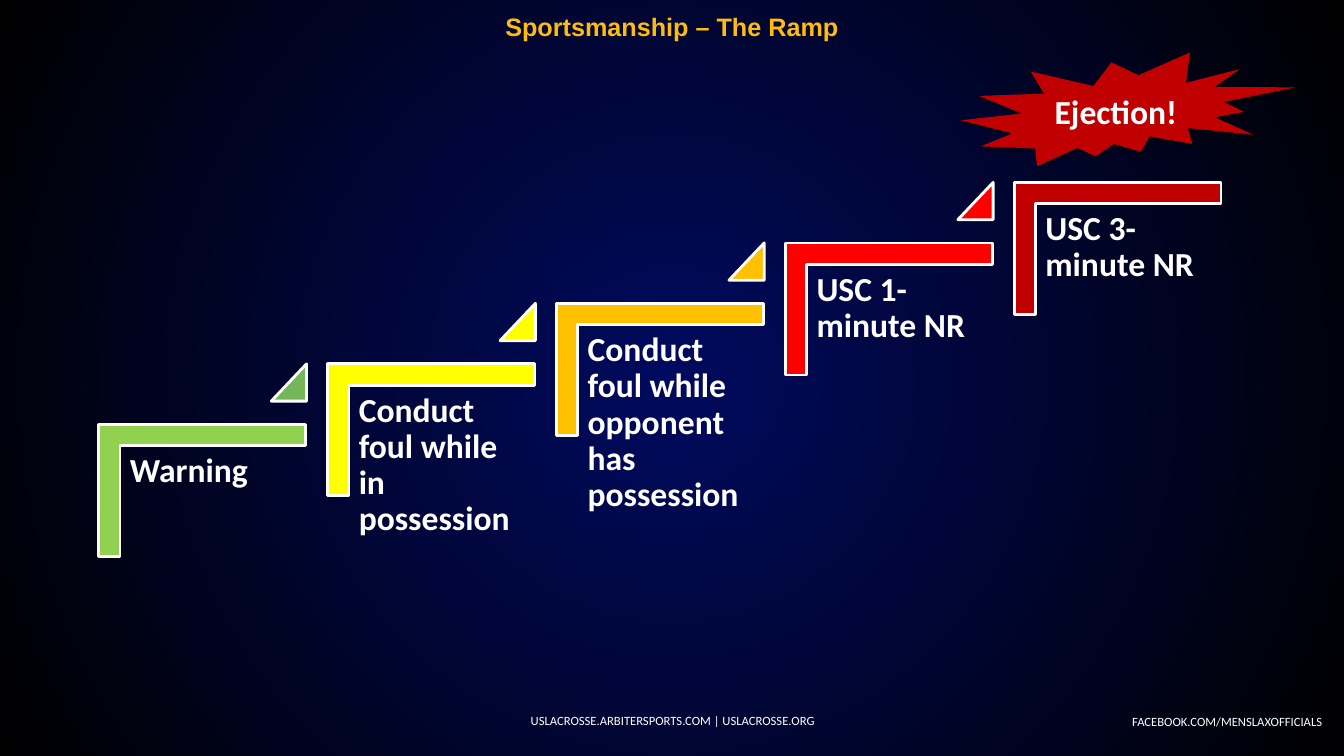
from lxml import etree
from pptx import Presentation
from pptx.dml.color import RGBColor
from pptx.enum.shapes import MSO_SHAPE
from pptx.enum.text import MSO_ANCHOR, MSO_AUTO_SIZE, PP_ALIGN
from pptx.oxml import parse_xml
from pptx.oxml.ns import nsdecls, qn
from pptx.util import Inches, Pt

CORNER = MSO_SHAPE.CORNER
TRIANGLE = MSO_SHAPE.ISOSCELES_TRIANGLE
BURST = MSO_SHAPE.EXPLOSION2
LEFT, CENTER, RIGHT = PP_ALIGN.LEFT, PP_ALIGN.CENTER, PP_ALIGN.RIGHT
TOP, MIDDLE = MSO_ANCHOR.TOP, MSO_ANCHOR.MIDDLE
NO_AUTOFIT = MSO_AUTO_SIZE.NONE

WHITE = "FFFFFF"
DARK_RED = "C00000"
STEPS = [
    ("Warning", 0.51, "92D050", "73B759"),
    ("Conduct foul while in possession", 1.6, "FFFF00", "FFFF00"),
    ("Conduct foul while opponent has possession", 1.96, "FFC000", "FFC000"),
    ("USC 1-minute NR", 0.87, "FF0000", "FF0000"),
    ("USC 3-minute NR", 0.87, DARK_RED, None),
]


def rgb(value):
    return RGBColor.from_string(value)


def inches(*values):
    return [Inches(value) for value in values]


def set_text(shape, text, size, align=CENTER, anchor=MIDDLE, color=WHITE,
             bold=True, font="Calibri", margins=(0.1, 0.05, 0.1, 0.05)):
    frame = shape.text_frame
    frame.text = text
    frame.word_wrap = True
    frame.auto_size = NO_AUTOFIT
    frame.vertical_anchor = anchor
    (frame.margin_left, frame.margin_top,
     frame.margin_right, frame.margin_bottom) = inches(*margins)
    paragraph = frame.paragraphs[0]
    paragraph.alignment = align
    run_font = paragraph.runs[0].font
    run_font.name = font
    run_font.size = Pt(size)
    run_font.bold = bold
    run_font.color.rgb = rgb(color)
    return paragraph


def add_filled(shapes, kind, box, fill, outlined=True):
    shape = shapes.add_shape(kind, *inches(*box))
    shape.shadow.inherit = False
    shape.fill.solid()
    shape.fill.fore_color.rgb = rgb(fill)
    if outlined:
        shape.line.color.rgb = rgb(WHITE)
        shape.line.width = Pt(2)
    else:
        shape.line.fill.background()
    return shape


def paint_background(slide):
    fill = slide.background.fill
    fill.gradient()
    for stop, color in zip(fill.gradient_stops, ("000A5E", "000000")):
        stop.color.rgb = rgb(color)
    gradient = slide.element.find(".//" + qn("a:gradFill"))
    linear = gradient.find(qn("a:lin"))
    gradient.replace(linear, parse_xml(
        f'<a:path {nsdecls("a")} path="circle">'
        '<a:fillToRect l="50000" t="50000" r="50000" b="50000"/></a:path>'))


def add_title(slide, box):
    title = slide.shapes.title
    title.left, title.top, title.width, title.height = inches(*box)
    set_text(title, "Sportsmanship – The Ramp", 18, color="FEBC11", font="Arial")


def add_step(slide, left, top, label, label_height, color, marker_color):
    width, height = 2.05, 1.31
    shift = (width - height) / 2
    shapes = slide.shapes.add_group_shape().shapes
    corner = add_filled(
        shapes, CORNER, (left + shift, top - shift, height, width), color)
    corner.rotation = 90
    corner.adjustments[0] = corner.adjustments[1] = 0.161
    text_box = shapes.add_textbox(
        *inches(left + 0.21, top + 0.22, 1.85, label_height))
    paragraph = set_text(text_box, label, 24, LEFT, TOP,
                         margins=(0.1, 0.07, 0.07, 0.07))
    paragraph.line_spacing = 0.9
    if marker_color:
        marker = add_filled(
            shapes, TRIANGLE, (left + 1.71, top - 0.6, 0.35, 0.37), marker_color)
        marker.adjustments[0] = 1


def add_ramp(slide, left, top):
    for index, step in enumerate(STEPS):
        add_step(slide, left + 2.27 * index, top - 0.6 * index, *step)


def add_ejection(slide, box):
    burst = add_filled(slide.shapes, BURST, box, DARK_RED, outlined=False)
    set_text(burst, "Ejection!", 24)
    effects = burst.element.spPr.find(qn("a:effectLst"))
    shadow = etree.SubElement(effects, qn("a:outerShdw"), blurRad=str(Pt(3.1)),
                              dist=str(Pt(1.8)), dir="5400000", rotWithShape="0")
    color = etree.SubElement(shadow, qn("a:srgbClr"), val="000000")
    etree.SubElement(color, qn("a:alpha"), val="35000")


def add_footer(slide, box, text, align):
    footer = slide.shapes.add_textbox(*inches(*box))
    set_text(footer, text, 9, align, bold=False)


def main():
    presentation = Presentation()
    presentation.slide_width, presentation.slide_height = inches(13.33, 7.5)
    slide = presentation.slides.add_slide(presentation.slide_layouts[5])
    paint_background(slide)
    add_title(slide, (0, 0.05, 13.33, 0.42))
    add_ramp(slide, 0.98, 4.21)
    add_ejection(slide, (9.53, 0.52, 3.32, 1.13))
    add_footer(slide, (4.56, 6.95, 4.22, 0.4),
               "USLACROSSE.ARBITERSPORTS.COM | USLACROSSE.ORG", CENTER)
    add_footer(slide, (11.09, 7.03, 2.12, 0.25),
               "FACEBOOK.COM/MENSLAXOFFICIALS", RIGHT)
    presentation.save("out.pptx")


if __name__ == "__main__":
    main()
